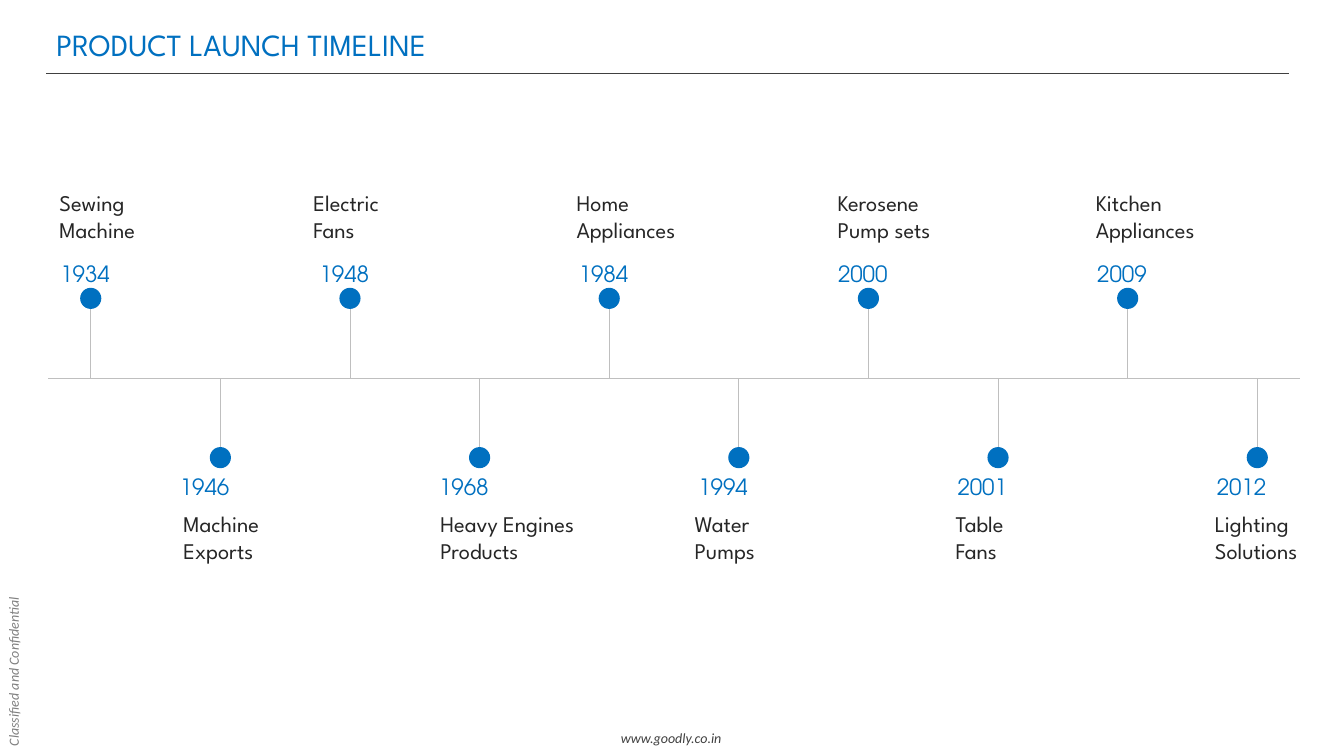
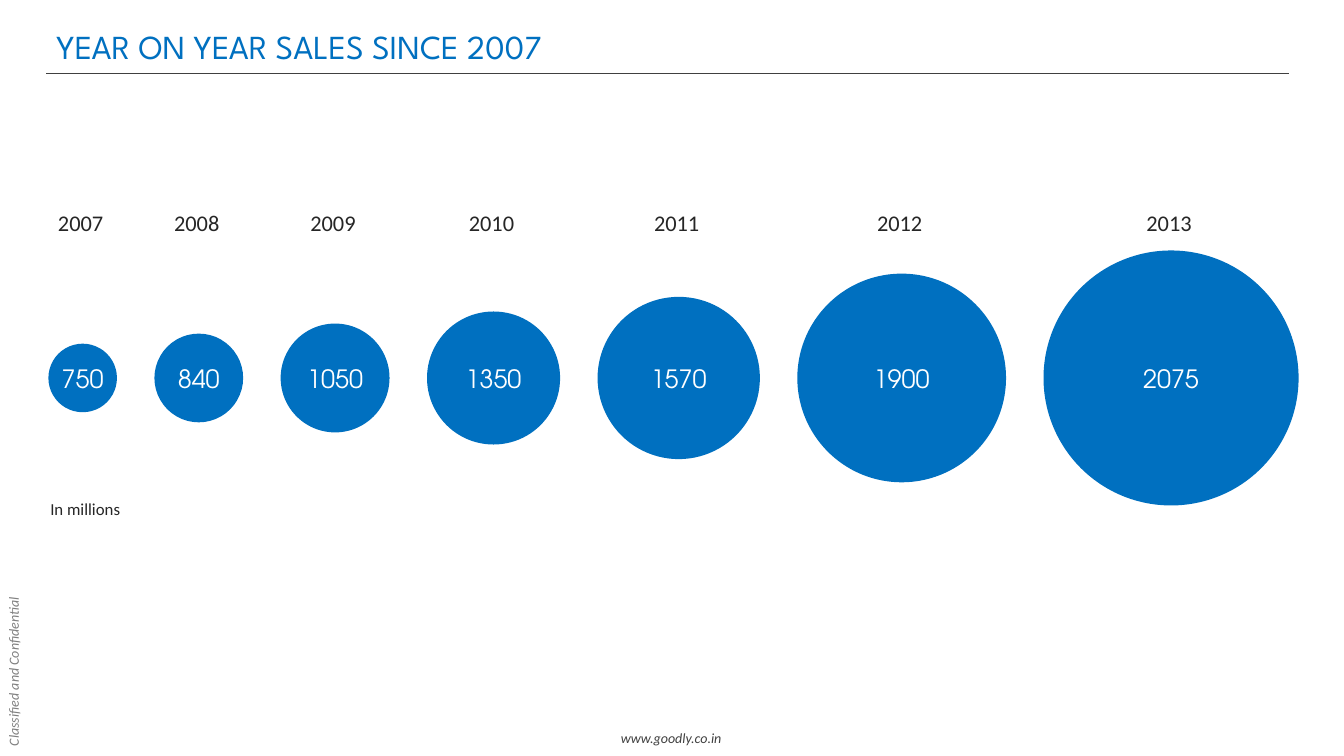
from lxml.etree import SubElement
from pptx import Presentation
from pptx.dml.color import RGBColor as Rgb
from pptx.enum.shapes import MSO_CONNECTOR as Conn, MSO_SHAPE as Kind
from pptx.enum.text import MSO_ANCHOR as Anchor, MSO_AUTO_SIZE as Fit, PP_ALIGN as Align
from pptx.oxml.ns import qn
from pptx.util import Inches, Pt

COLORS = {"blue": "0070C0", "ink": "262626", "dark": "404040",
          "gray": "808080", "rule": "BFBFBF", "white": "FFFFFF"}
SPARTAN, ADVENTOR, CALIBRI = "League Spartan", "TeX Gyre Adventor", "Calibri"
STYLES = {
    "title": {"name": SPARTAN, "size": 24, "color": "blue", "bold": False},
    "label": {"name": SPARTAN, "size": 16, "color": "ink"},
    "date": {"name": ADVENTOR, "size": 16, "color": "blue"},
    "value": {"name": ADVENTOR, "size": 18, "color": "white"},
    "year": {"name": CALIBRI, "size": 16, "color": "ink"},
    "note": {"name": CALIBRI, "size": 12, "color": "ink"},
    "side": {"name": CALIBRI, "size": 10, "color": "gray", "italic": True},
    "site": {"name": CALIBRI, "size": 10, "color": "dark", "italic": True},
}
MID = 3.75

# year, label, label left, label width
EVENTS = [
    ("1934", "Sewing Machine", 0.49, 1.58),
    ("1946", "Machine\nExports", 1.72, 1.98),
    ("1948", "Electric\nFans", 3.01, 1.61),
    ("1968", "Heavy Engines Products", 4.27, 1.83),
    ("1984", "Home Appliances", 5.62, 1.61),
    ("1994", "Water\nPumps", 6.79, 1.83),
    ("2000", "Kerosene Pump sets", 8.21, 1.44),
    ("2001", "Table\nFans", 9.38, 1.83),
    ("2009", "Kitchen\nAppliances", 10.77, 2.12),
    ("2012", "Lighting\nSolutions", 11.95, 1.31),
]

# year, sales, circle diameter
SALES = [("2007", "750", 0.68), ("2008", "840", 0.88), ("2009", "1050", 1.08),
         ("2010", "1350", 1.32), ("2011", "1570", 1.61), ("2012", "1900", 2.07),
         ("2013", "2075", 2.53)]


def paint(name):
    return Rgb.from_string(COLORS[name])


class Deck:
    def __init__(self):
        self.prs = Presentation()
        self.prs.slide_width, self.prs.slide_height = Inches(13.33), Inches(7.5)

    def page(self, title, size=24):
        """Start a slide with the shared title, rule and footers."""
        self.slide = self.prs.slides.add_slide(self.prs.slide_layouts[5])
        head = self.slide.shapes.title
        place = {"left": 0.46, "top": 0.25, "width": 10.84, "height": 0.46}
        for key, val in place.items():
            setattr(head, key, Inches(val))
        self.fill(head.text_frame, title, "title", size=size)
        head.text_frame.vertical_anchor = Anchor.TOP
        head.text_frame.auto_size = Fit.NONE
        head.text_frame.paragraphs[0].line_spacing = 0.9
        self.text("Classified and Confidential", "side", -0.71, 6.52, 1.69, 0.27,
                  wrap=False).rotation = 270
        self.text("www.goodly.co.in", "site", 6.06, 7.19, 1.22, 0.27, wrap=False)
        self.line(0.46, 0.73, 12.78, 0.73, "dark")

    def fill(self, frame, text, style, align=Align.LEFT, **extra):
        """Put styled text into a text frame."""
        frame.text = text
        for para in frame.paragraphs:
            para.alignment = align
            for key, val in {**STYLES[style], **extra}.items():
                if key == "color":
                    para.runs[0].font.color.rgb = paint(val)
                else:
                    setattr(para.runs[0].font, key, Pt(val) if key == "size" else val)

    def text(self, text, style, left, top, width, height, align=Align.LEFT, wrap=True):
        box = self.slide.shapes.add_textbox(*map(Inches, (left, top, width, height)))
        box.text_frame.word_wrap = wrap
        box.text_frame.auto_size = Fit.SHAPE_TO_FIT_TEXT
        self.fill(box.text_frame, text, style, align)
        return box

    def line(self, x1, y1, x2, y2, color="rule"):
        ends = map(Inches, (x1, y1, x2, y2))
        line = self.slide.shapes.add_connector(Conn.STRAIGHT, *ends)
        line.line.color.rgb = paint(color)
        line.line.width = Pt(0.5)
        SubElement(line._element.spPr, qn("a:effectLst"))

    def disc(self, x, y, size, text=None):
        """Draw a blue circle centred on x, y."""
        spot = (x - size / 2, y - size / 2, size, size)
        disc = self.slide.shapes.add_shape(Kind.OVAL, *map(Inches, spot))
        disc.shadow.inherit = False
        disc.fill.solid()
        disc.fill.fore_color.rgb = paint("blue")
        disc.line.fill.background()
        if text:
            frame = disc.text_frame
            frame.margin_left = frame.margin_right = 0
            frame.vertical_anchor = Anchor.MIDDLE
            self.fill(frame, text, "value", Align.CENTER)


def launches(deck):
    deck.page("PRODUCT LAUNCH TIMELINE", size=22)
    deck.line(0.48, MID, 12.89, MID)
    first, last = 0.9, 12.47
    step = (last - first) / (len(EVENTS) - 1)
    for i, (year, label, left, width) in enumerate(EVENTS):
        x = first + i * step
        # side, date offset, date top, label top
        side, shift, date, top = (1, 0.5, 4.64, 5.01) if i % 2 else (-1, 0.4, 2.53, 1.83)
        deck.line(x, MID, x, MID + side * 0.69)
        deck.disc(x, MID + side * 0.79, 0.21)
        deck.text(year, "date", x - shift, date, 0.76, 0.37)
        deck.text(label, "label", left, top, width, 0.64)


def sales(deck):
    deck.page("YEAR ON YEAR SALES SINCE 2007")
    left, right = 0.48, 12.88
    gap = (right - left - sum(size for *_, size in SALES)) / (len(SALES) - 1)
    for year, value, size in SALES:
        x = left + size / 2
        deck.disc(x, MID, size, value)
        deck.text(year, "year", x - 0.4, 2.03, 0.76, 0.37, Align.CENTER)
        left += size + gap
    deck.text("In millions", "note", 0.4, 4.9, 0.95, 0.3)


def main():
    deck = Deck()
    launches(deck)
    sales(deck)
    deck.prs.save("out.pptx")


if __name__ == "__main__":
    main()
